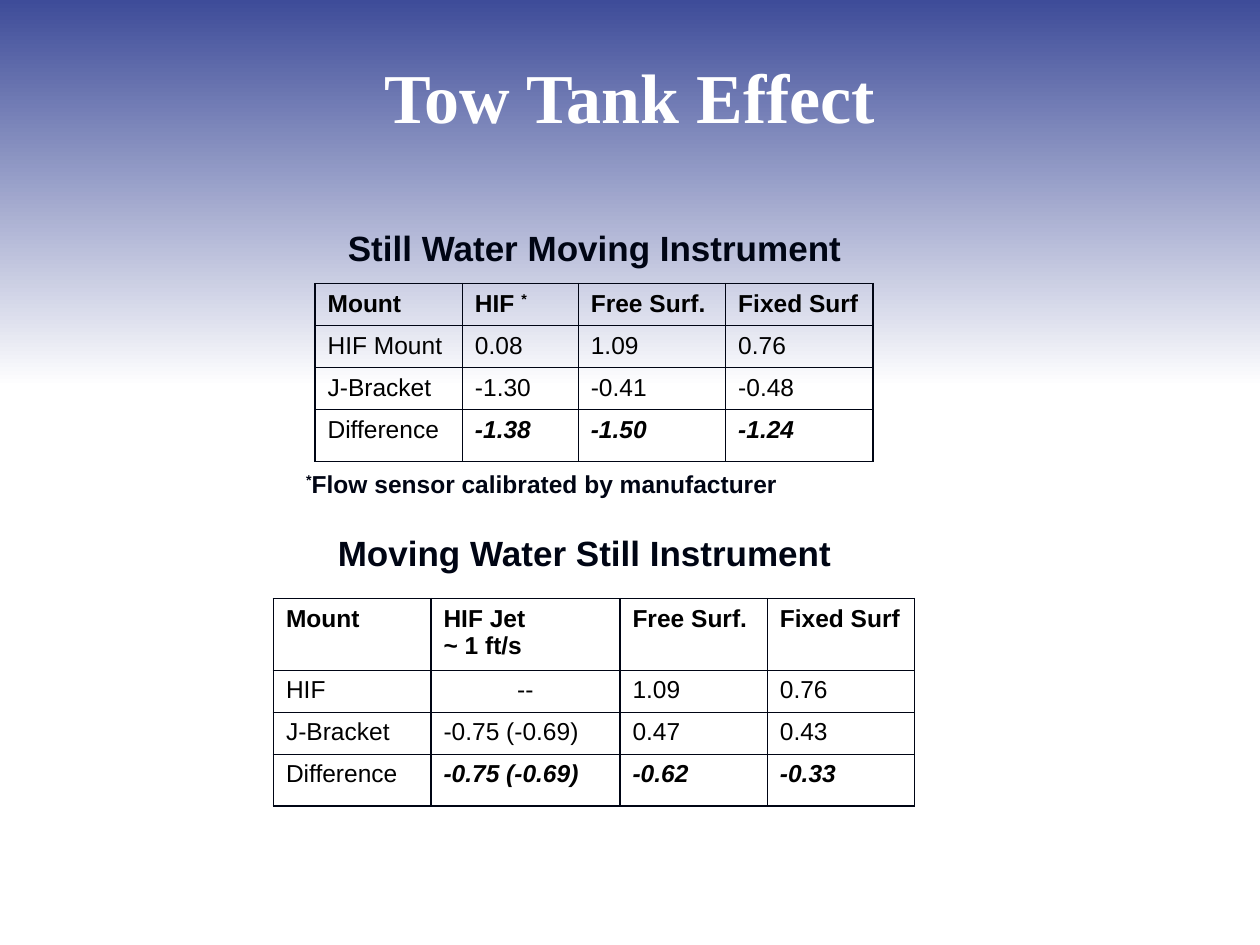
from lxml import etree
from pptx import Presentation
from pptx import util as u
from pptx.dml.color import RGBColor
from pptx.enum import shapes, text
from pptx.oxml import ns

INDIGO = RGBColor(0x3E, 0x4C, 0x99)
WHITE = RGBColor(0xFF, 0xFF, 0xFF)
INK = RGBColor(0x00, 0x05, 0x14)
BLACK = RGBColor(0x00, 0x00, 0x00)

WIDTH, HEIGHT = u.Inches(10), u.Inches(7.5)
ROW = 0.33
LAST_ROW = 0.41

TITLE = dict(name="Times New Roman", size=u.Pt(40), bold=True, color=WHITE)
HEADING = dict(name="Arial", size=u.Pt(20), bold=True, color=INK)
NOTE = dict(HEADING, size=u.Pt(14))
BODY = dict(NOTE, bold=False, color=BLACK)
HEADER = dict(BODY, bold=True)
RESULT = dict(HEADER, italic=True)

STILL_WATER = [
    ["Mount", "HIF ^*", "Free Surf.", "Fixed Surf"],
    ["HIF Mount", "0.08", "1.09", "0.76"],
    ["J-Bracket", "-1.30", "-0.41", "-0.48"],
    ["Difference", "-1.38", "-1.50", "-1.24"],
]
MOVING_WATER = [
    ["Mount", "HIF Jet\n~ 1 ft/s", "Free Surf.", "Fixed Surf"],
    ["HIF", "--", "1.09", "0.76"],
    ["J-Bracket", "-0.75 (-0.69)", "0.47", "0.43"],
    ["Difference", "-0.75 (-0.69)", "-0.62", "-0.33"],
]


def add_child(parent, tag, **values):
    return etree.SubElement(parent, ns.qn(tag), **values)


def write(frame, words, style, align):
    """Fill a text frame; the character after ^ is raised."""
    for index, line in enumerate(words.split("\n")):
        para = frame.paragraphs[0] if index == 0 else frame.add_paragraph()
        para.alignment = align
        plain, mark, rest = line.partition("^")
        for part, raised in ((plain, False), (rest[:1], True), (rest[1:], False)):
            if not part:
                continue
            span = para.add_run()
            span.text = part
            for key, value in style.items():
                if key == "color":
                    span.font.color.rgb = value
                else:
                    setattr(span.font, key, value)
            if raised:
                span._r.get_or_add_rPr().set("baseline", "30000")


def add_label(page, area, words, style, wrap=False):
    box = page.shapes.add_textbox(*map(u.Inches, area))
    frame = box.text_frame
    frame.word_wrap = wrap
    frame.vertical_anchor = text.MSO_ANCHOR.MIDDLE if wrap else text.MSO_ANCHOR.TOP
    write(frame, words, style, text.PP_ALIGN.CENTER)
    return box


def add_backdrop(page):
    band = page.shapes.add_shape(
        shapes.MSO_SHAPE.RECTANGLE, 0, 0, WIDTH, int(HEIGHT * 0.41))
    band.shadow.inherit = False
    band.line.fill.background()
    band.fill.gradient()
    band.fill.gradient_angle = 270
    for stop, color in zip(band.fill.gradient_stops, (INDIGO, WHITE)):
        stop.color.rgb = color


def add_title(page, area, words):
    box = add_label(page, area, words, TITLE, wrap=True)
    # Text shadow, placed directly after the text fill
    props = box.text_frame.paragraphs[0].runs[0]._r.get_or_add_rPr()
    effects = etree.Element(ns.qn("a:effectLst"))
    shadow = add_child(effects, "a:outerShdw", dist="38100", dir="2700000")
    add_child(shadow, "a:srgbClr", val=str(BLACK))
    props.find(ns.qn("a:solidFill")).addnext(effects)


def add_borders(cell):
    props = cell._tc.get_or_add_tcPr()
    for side in ("L", "R", "T", "B"):
        line = add_child(props, "a:ln" + side, w=str(u.Pt(1)))
        add_child(add_child(line, "a:solidFill"), "a:srgbClr", val=str(INK))


def add_results(page, left, top, columns, rows, data):
    area = (left, top, sum(columns), sum(rows))
    table = page.shapes.add_table(
        len(rows), len(columns), *map(u.Inches, area)).table
    table.first_row = table.horz_banding = False
    for column, width in zip(table.columns, columns):
        column.width = u.Inches(width)
    for row, height in zip(table.rows, rows):
        row.height = u.Inches(height)
    for r, values in enumerate(data):
        for c, value in enumerate(values):
            cell = table.cell(r, c)
            add_borders(cell)
            cell.fill.background()
            style = BODY
            if r == 0:
                style = HEADER
            elif r == len(data) - 1 and c > 0:
                style = RESULT
            align = text.PP_ALIGN.CENTER if value == "--" else text.PP_ALIGN.LEFT
            write(cell.text_frame, value, style, align)


def main():
    deck = Presentation()
    deck.slide_width, deck.slide_height = WIDTH, HEIGHT
    page = deck.slides.add_slide(deck.slide_layouts[6])

    add_backdrop(page)
    add_title(page, (0.5, 0.42, 9, 0.67), "Tow Tank Effect")

    # Still water section
    add_label(page, (2.65, 1.75, 4.14, 0.44), "Still Water Moving Instrument", HEADING)
    add_results(page, 2.5, 2.25, [1.17, 0.92, 1.17, 1.17],
                [ROW] * 3 + [LAST_ROW], STILL_WATER)
    add_label(page, (2.3, 3.67, 4, 0.34),
              "^*Flow sensor calibrated by manufacturer", NOTE)

    # Moving water section
    add_label(page, (2.57, 4.17, 4.14, 0.44), "Moving Water Still Instrument", HEADING)
    add_results(page, 2.17, 4.75, [1.25, 1.5, 1.17, 1.17],
                [0.57, ROW, ROW, LAST_ROW], MOVING_WATER)

    deck.save("out.pptx")


if __name__ == "__main__":
    main()
